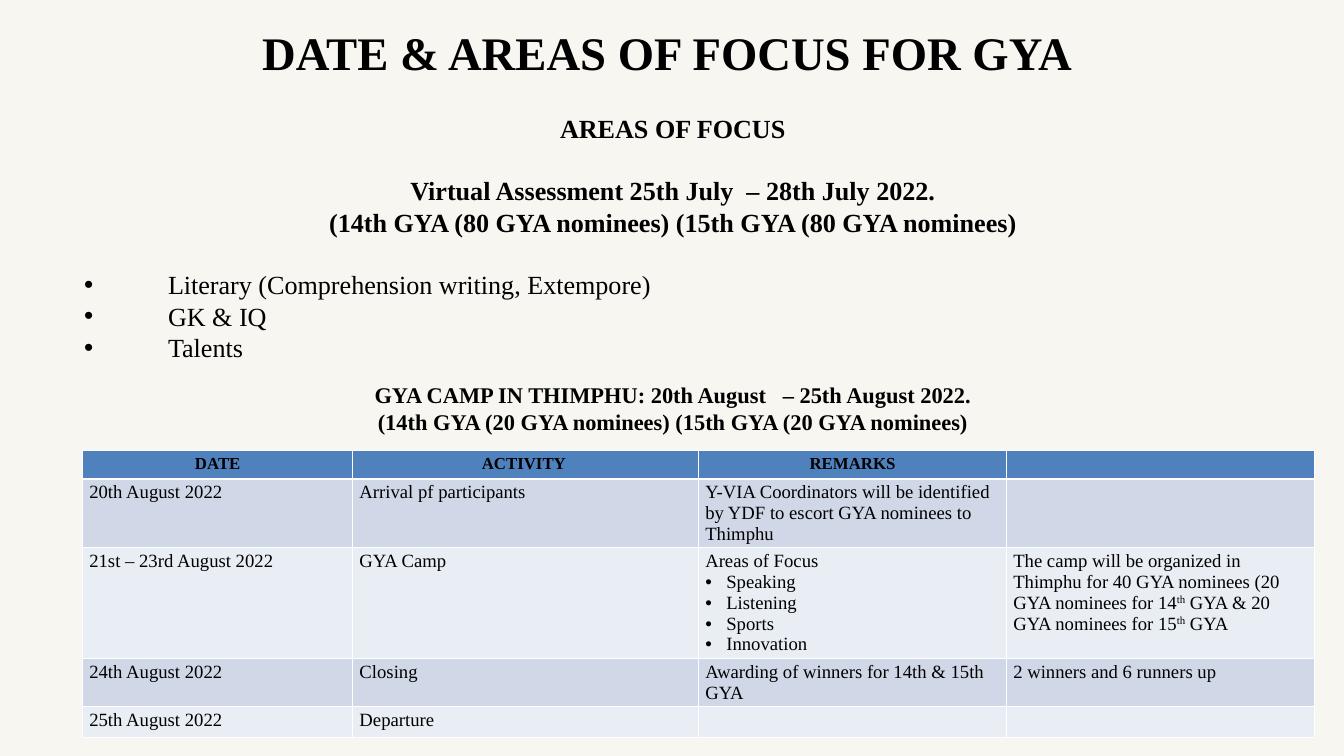
"""Build the slide with the dates and areas of focus of the GYA camp."""
from dataclasses import dataclass
from typing import Any

from lxml import etree
from pptx import Presentation
from pptx.dml.color import RGBColor
from pptx.enum import text
from pptx.oxml import ns
from pptx.util import Pt

BACKGROUND = RGBColor(0xF7, 0xF6, 0xF0)
BLACK = RGBColor(0, 0, 0)
WHITE = RGBColor(0xFF, 0xFF, 0xFF)
HEADER = RGBColor(0x4F, 0x81, 0xBD)
BANDS = (RGBColor(0xD0, 0xD8, 0xE8), RGBColor(0xE9, 0xED, 0xF4))
FONT = "Times New Roman"
CENTER, LEFT = text.PP_ALIGN.CENTER, text.PP_ALIGN.LEFT
BLANK_LINE = 33.5
FRAME_FORMAT = {
    "margin_left": 0, "margin_top": 0, "margin_right": 0, "margin_bottom": 0,
    "word_wrap": True,
    "auto_size": text.MSO_AUTO_SIZE.NONE,
    "vertical_anchor": text.MSO_ANCHOR.TOP,
}


@dataclass(frozen=True)
class Span:
    words: str
    raised: bool = False


@dataclass(frozen=True)
class Para:
    spans: tuple[Span, ...]
    size: float = 20
    bold: bool = False
    align: Any = LEFT
    before: float = 0
    hang: float = 0


def line(words: str, **options: Any) -> Para:
    return Para((Span(words),), **options)


def heading(words: str, size: float = 28, before: float = 0) -> Para:
    return line(words, size=size, bold=True, align=CENTER, before=before)


def topic(words: str, before: float = 0) -> Para:
    return line(words, size=28, before=before, hang=90)


def set_values(target: Any, values: dict[str, Any]) -> None:
    for name, value in values.items():
        setattr(target, name, value)


def set_bullet(para: Any, hang: float) -> None:
    properties = para._p.get_or_add_pPr()
    properties.set("marL", str(Pt(hang)))
    properties.set("indent", str(-Pt(hang)))
    font = etree.SubElement(properties, ns.qn("a:buFont"))
    font.set("typeface", "Arial")
    etree.SubElement(properties, ns.qn("a:buChar")).set("char", "•")


def set_bottom_border(cell: Any, width: float) -> None:
    border = etree.Element(ns.qn("a:lnB"), w=str(Pt(width)))
    fill = etree.SubElement(border, ns.qn("a:solidFill"))
    etree.SubElement(fill, ns.qn("a:srgbClr"), val=str(WHITE))
    cell._tc.get_or_add_tcPr().insert(0, border)


def write(frame: Any, paras: tuple[Para, ...]) -> None:
    for index, content in enumerate(paras):
        para = frame.add_paragraph() if index else frame.paragraphs[0]
        set_values(para, {
            "alignment": content.align,
            "space_before": Pt(content.before),
            "space_after": Pt(0),
            "line_spacing": 1.0,
        })
        if content.hang:
            set_bullet(para, content.hang)
        for part in content.spans:
            span = para.add_run()
            span.text = part.words
            set_values(span.font, {"name": FONT, "size": Pt(content.size), "bold": content.bold})
            span.font.color.rgb = BLACK
            if part.raised:
                span.font._element.set("baseline", "30000")


def add_title(page: Any) -> None:
    title = page.shapes.title
    set_values(title, {"left": Pt(192), "top": Pt(26), "width": Pt(1056), "height": Pt(60.5)})
    set_values(title.text_frame, FRAME_FORMAT)
    write(title.text_frame, (heading("DATE & AREAS OF FOCUS FOR GYA ", 50),))


def add_focus(page: Any) -> None:
    box = page.shapes.add_textbox(Pt(90), Pt(86.4), Pt(1261.4), Pt(697.7))
    set_values(box.text_frame, FRAME_FORMAT | {"margin_top": Pt(BLANK_LINE)})
    write(box.text_frame, (
        heading("AREAS OF FOCUS"),
        heading("Virtual Assessment 25th July  – 28th July 2022.", before=BLANK_LINE),
        heading("(14th GYA (80 GYA nominees) (15th GYA (80 GYA nominees)"),
        topic("Literary (Comprehension writing, Extempore)", BLANK_LINE),
        topic("GK & IQ"),
        topic("Talents"),
        heading("GYA CAMP IN THIMPHU: 20th August   – 25th August 2022.", 24, 20),
        heading("(14th GYA (20 GYA nominees) (15th GYA (20 GYA nominees)", 24),
    ))


HEADINGS = ("DATE", "ACTIVITY ", "REMARKS", "")
SKILLS = ("Speaking", "Listening", "Sports", "Innovation")
CAMP_FOCUS = (line("Areas of Focus"), *(line(skill, hang=22.5) for skill in SKILLS))
CAMP_NOTE = (Para((
    Span("The camp will be organized in Thimphu for 40 GYA nominees (20 GYA nominees for 14"),
    Span("th", True),
    Span(" GYA & 20 GYA nominees for 15"),
    Span("th", True),
    Span(" GYA"),
)),)
SCHEDULE = (
    ("20th August 2022", "Arrival pf participants",
     "Y-VIA Coordinators will be identified by YDF to escort GYA nominees to Thimphu", ""),
    ("21st – 23rd August 2022", "GYA Camp", CAMP_FOCUS, CAMP_NOTE),
    ("24th August 2022", "Closing", "Awarding of winners for 14th & 15th GYA",
     "2 winners and 6 runners up"),
    ("25th August 2022", "Departure", "", ""),
)
COLUMN_WIDTHS = (289.5, 370.5, 330, 330)
ROW_HEIGHTS = (30, 74, 118.5, 51, 33)


def add_schedule(page: Any) -> None:
    table = page.shapes.add_table(
        len(ROW_HEIGHTS), len(COLUMN_WIDTHS), Pt(88.5), Pt(483),
        Pt(sum(COLUMN_WIDTHS)), Pt(sum(ROW_HEIGHTS))).table
    for column, width in zip(table.columns, COLUMN_WIDTHS):
        column.width = Pt(width)
    for row, height in zip(table.rows, ROW_HEIGHTS):
        row.height = Pt(height)
    for r, entries in enumerate((HEADINGS, *SCHEDULE)):
        style = {} if r else {"size": 18, "bold": True, "align": CENTER}
        for c, entry in enumerate(entries):
            cell = table.cell(r, c)
            cell.fill.solid()
            cell.fill.fore_color.rgb = BANDS[(r - 1) % 2] if r else HEADER
            if r == 0:
                set_bottom_border(cell, 3)
            if entry:
                paras = (line(entry, **style),) if isinstance(entry, str) else entry
                write(cell.text_frame, paras)


def main() -> None:
    deck = Presentation()
    set_values(deck, {"slide_width": Pt(1440), "slide_height": Pt(810)})
    page = deck.slides.add_slide(deck.slide_layouts.get_by_name("Title Only"))
    page.background.fill.solid()
    page.background.fill.fore_color.rgb = BACKGROUND
    add_title(page)
    add_focus(page)
    add_schedule(page)
    deck.save("out.pptx")


if __name__ == "__main__":
    main()
